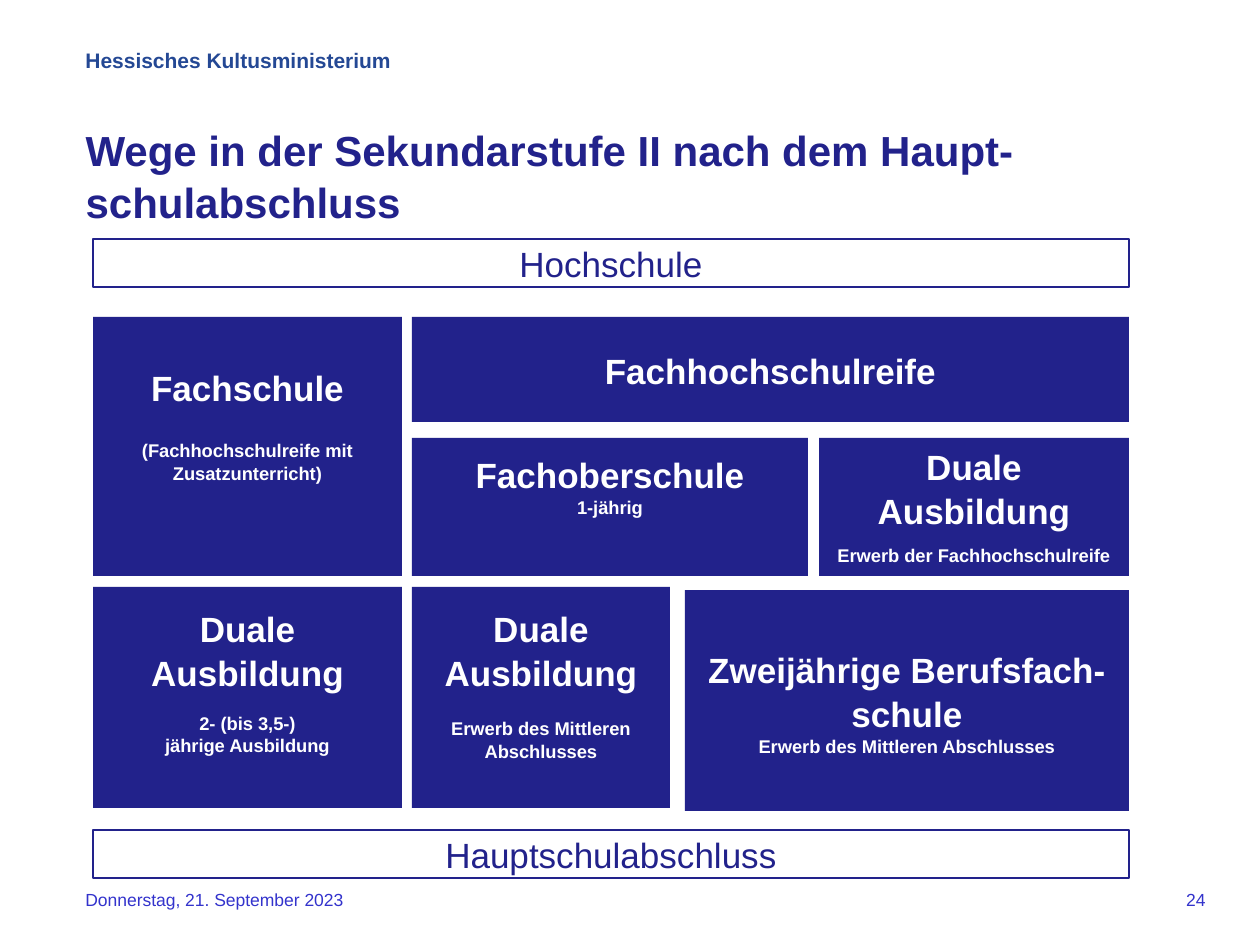
from pptx import Presentation
from pptx.dml.color import RGBColor
from pptx.enum.shapes import MSO_SHAPE
from pptx.enum.text import MSO_ANCHOR, PP_ALIGN
from pptx.util import Emu, Pt

RECTANGLE = MSO_SHAPE.RECTANGLE
TOP, MIDDLE = MSO_ANCHOR.TOP, MSO_ANCHOR.MIDDLE
LEFT, CENTER, RIGHT = PP_ALIGN.LEFT, PP_ALIGN.CENTER, PP_ALIGN.RIGHT
EMU_PER_PX = 914400 / 126
NAVY, WHITE, BLUE, HEADER_BLUE = "22228B", "FFFFFF", "3333CC", "244894"

LEFT_EDGE, RIGHT_EDGE = 93, 1129
SECOND_COLUMN = 412

# left, top, right, bottom, top inset, heading, gap in points, detail lines
SCHOOL_BOXES = [
    (LEFT_EDGE, 317, 402, 576, 48, "Fachschule", 17,
     ["(Fachhochschulreife mit Zusatzunterricht)"]),
    (SECOND_COLUMN, 438, 808, 576, 14, "Fachoberschule", 0, ["1-jährig"]),
    (819, 438, RIGHT_EDGE, 576, 6, "Duale Ausbildung", 7,
     ["Erwerb der Fachhochschulreife"]),
    (LEFT_EDGE, 587, 402, 808, 19, "Duale Ausbildung", 10,
     ["2- (bis 3,5-)", "jährige Ausbildung"]),
    (SECOND_COLUMN, 587, 670, 808, 19, "Duale Ausbildung", 13,
     ["Erwerb des Mittleren Abschlusses"]),
    (685, 590, RIGHT_EDGE, 811, 57, "Zweijährige Berufsfach-schule", 0,
     ["Erwerb des Mittleren Abschlusses"]),
]


def px(length):
    return Emu(round(length * EMU_PER_PX))


def color(hex_string):
    return RGBColor.from_string(hex_string)


def place(shape, left, top, width, height):
    shape.left, shape.top = px(left), px(top)
    shape.width, shape.height = px(width), px(height)


def write(shape, text, size, text_color, bold=False, align=LEFT, before=0,
          append=False):
    """Write one paragraph, as the first one or appended to the frame."""
    frame = shape.text_frame
    frame.word_wrap = True
    paragraph = frame.add_paragraph() if append else frame.paragraphs[0]
    paragraph.alignment = align
    paragraph.line_spacing = 1.04
    paragraph.space_before = Pt(before)
    run = paragraph.add_run()
    run.text = text
    run.font.name = "Arial"
    run.font.size = Pt(size)
    run.font.bold = bold
    run.font.color.rgb = color(text_color)


def add_title(slide, text):
    title = slide.shapes.title
    place(title, 73, 116, 1071, 157)
    title.text_frame.vertical_anchor = TOP
    write(title, text, 24, NAVY, bold=True)


def add_label(slide, left, top, width, height, text, size, text_color, **style):
    label = slide.shapes.add_textbox(px(left), px(top), px(width), px(height))
    write(label, text, size, text_color, **style)


def add_box(slide, left, top, right, bottom, fill, anchor=MIDDLE):
    box = slide.shapes.add_shape(RECTANGLE, px(left), px(top),
                                 px(right - left), px(bottom - top))
    box.shadow.inherit = False
    box.fill.solid()
    box.fill.fore_color.rgb = color(fill)
    box.line.fill.background()
    box.text_frame.vertical_anchor = anchor
    return box


def add_level_bar(slide, top, text):
    bar = add_box(slide, LEFT_EDGE, top, RIGHT_EDGE, top + 48, WHITE)
    bar.line.color.rgb = color(NAVY)
    bar.line.width = Pt(0.75)
    write(bar, text, 20, NAVY, align=CENTER)


def add_school_box(slide, left, top, right, bottom, inset, heading, gap, details):
    box = add_box(slide, left, top, right, bottom, NAVY, anchor=TOP)
    box.text_frame.margin_top = px(inset)
    write(box, heading, 20, WHITE, bold=True, align=CENTER)
    for index, detail in enumerate(details):
        write(box, detail, 10.5, WHITE, bold=True, align=CENTER,
              before=0 if index else gap, append=True)


def main():
    presentation = Presentation()
    presentation.slide_width, presentation.slide_height = px(1260), px(945)
    slide = presentation.slides.add_slide(presentation.slide_layouts[5])

    add_label(slide, 73, 40, 399, 63, "Hessisches Kultusministerium", 12,
              HEADER_BLUE, bold=True)
    add_title(slide, "Wege in der Sekundarstufe II nach dem Haupt-schulabschluss")

    add_level_bar(slide, 239, "Hochschule")
    qualification = add_box(slide, SECOND_COLUMN, 317, RIGHT_EDGE, 422, NAVY)
    write(qualification, "Fachhochschulreife", 20, WHITE, bold=True, align=CENTER)
    for school_box in SCHOOL_BOXES:
        add_school_box(slide, *school_box)
    add_level_bar(slide, 830, "Hauptschulabschluss")

    add_label(slide, 73, 882, 406, 53, "Donnerstag, 21. September 2023", 10, BLUE)
    add_label(slide, 903, 882, 315, 42, "24", 10, BLUE, align=RIGHT)
    presentation.save("out.pptx")


if __name__ == "__main__":
    main()
